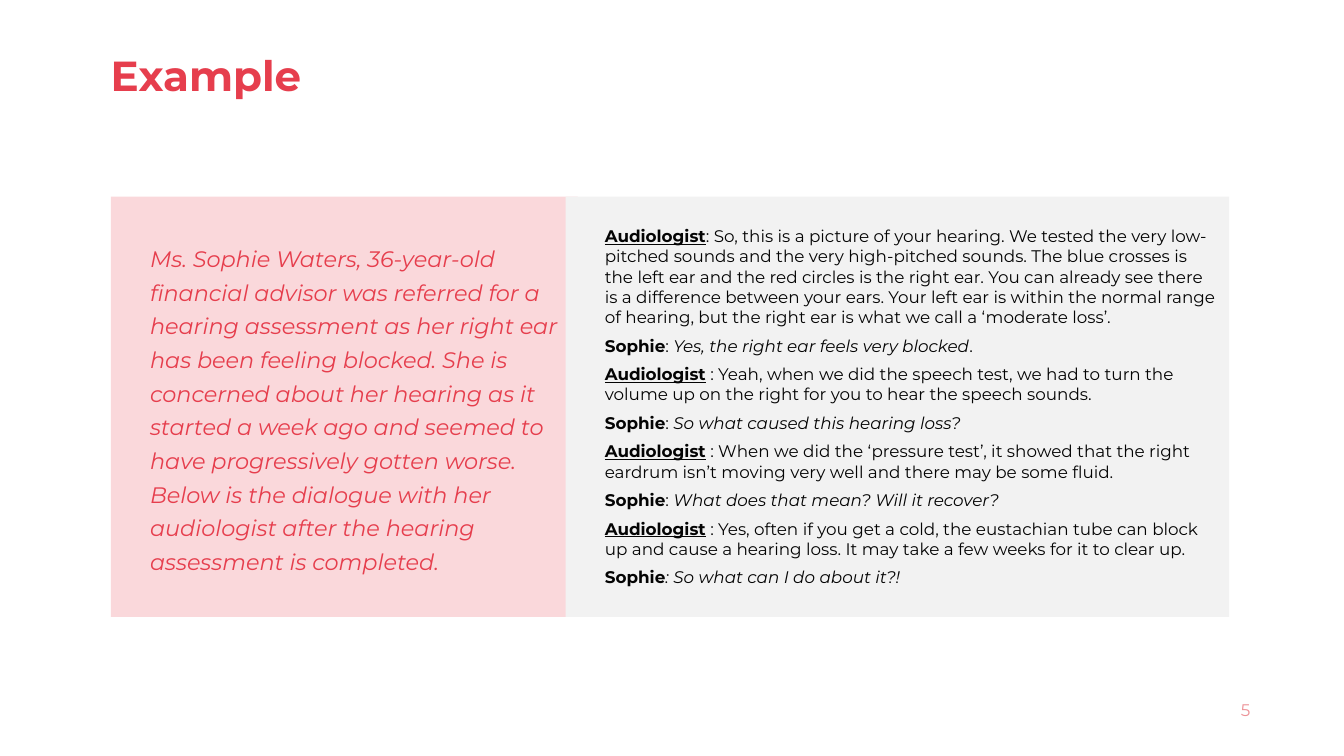
from dataclasses import dataclass

from pptx import Presentation
from pptx.dml.color import RGBColor
from pptx.enum.shapes import MSO_SHAPE
from pptx.enum.text import MSO_ANCHOR, PP_ALIGN
from pptx.util import Inches, Pt

SLIDE_WIDTH, SLIDE_HEIGHT = Inches(13.33), Inches(7.5)


@dataclass(frozen=True)
class Theme:
    font: str = "Montserrat"
    red: str = "E63E4D"
    pink: str = "FAD8DB"
    rose: str = "ED9297"
    grey: str = "F2F2F2"
    ink: str = "040404"
    title_size: int = 30
    case_size: int = 16
    small_size: int = 12
    indent: float = 0.29


THEME = Theme()

CASE = (
    "Ms. Sophie Waters, 36-year-old financial advisor was referred for a hearing "
    "assessment as her right ear has been feeling blocked. She is concerned about her "
    "hearing as it started a week ago and seemed to have progressively gotten worse. "
    "Below is the dialogue with her audiologist after the hearing assessment is completed."
)

# Each line: speaker, then (text, italic) pieces
DIALOGUE = [
    ("Audiologist", [(
        ": So, this is a picture of your hearing. We tested the very low-pitched sounds "
        "and the very high-pitched sounds. The blue crosses is the left ear and the red "
        "circles is the right ear. You can already see there is a difference between your "
        "ears. Your left ear is within the normal range of hearing, but the right ear is "
        "what we call a ‘moderate loss’.", False)]),
    ("Sophie", [(": ", False), ("Yes, the right ear feels very blocked", True), (".", False)]),
    ("Audiologist", [(
        " : Yeah, when we did the speech test, we had to turn the volume up on the right "
        "for you to hear the speech sounds.", False)]),
    ("Sophie", [(": ", False), ("So what caused this hearing loss?", True)]),
    ("Audiologist", [(
        " : When we did the ‘pressure test’, it showed that the right eardrum isn’t moving "
        "very well and there may be some fluid.", False)]),
    ("Sophie", [(": ", False), ("What does that mean? Will it recover?", True)]),
    ("Audiologist", [(
        " : Yes, often if you get a cold, the eustachian tube can block up and cause a "
        "hearing loss. It may take a few weeks for it to clear up.", False)]),
    ("Sophie", [(": So what can I do about it?!", True)]),
]


def place(left, top, width, height):
    """Turn percentages of the slide into lengths."""
    return (int(SLIDE_WIDTH * left / 100), int(SLIDE_HEIGHT * top / 100),
            int(SLIDE_WIDTH * width / 100), int(SLIDE_HEIGHT * height / 100))


def prepare_frame(shape):
    frame = shape.text_frame
    frame.word_wrap = True
    frame.vertical_anchor = MSO_ANCHOR.MIDDLE
    return frame


def add_label(slide, area):
    return prepare_frame(slide.shapes.add_textbox(*place(*area)))


def add_panel(slide, area, fill):
    panel = slide.shapes.add_shape(MSO_SHAPE.RECTANGLE, *place(*area))
    panel.shadow.inherit = False
    panel.fill.solid()
    panel.fill.fore_color.rgb = RGBColor.from_string(fill)
    panel.line.fill.background()
    return prepare_frame(panel)


def indent(paragraph):
    paragraph.alignment = PP_ALIGN.LEFT
    properties = paragraph._p.get_or_add_pPr()
    properties.set("marL", str(Inches(THEME.indent)))
    properties.set("indent", "0")


def add_run(paragraph, text, size, color, bold=False, italic=False, underline=False):
    run = paragraph.add_run()
    run.text = text
    font = run.font
    font.name, font.size = THEME.font, Pt(size)
    font.bold, font.italic, font.underline = bold, italic, underline
    font.color.rgb = RGBColor.from_string(color)


def add_dialogue(frame):
    for index, (speaker, pieces) in enumerate(DIALOGUE):
        paragraph = frame.add_paragraph() if index else frame.paragraphs[0]
        indent(paragraph)
        if index < len(DIALOGUE) - 1:
            paragraph.space_after = Pt(6)
        add_run(paragraph, speaker, THEME.small_size, THEME.ink, bold=True,
                underline=speaker == "Audiologist")
        for text, italic in pieces:
            add_run(paragraph, text, THEME.small_size, THEME.ink, italic=italic)


def main():
    presentation = Presentation()
    presentation.slide_width, presentation.slide_height = SLIDE_WIDTH, SLIDE_HEIGHT
    slide = presentation.slides.add_slide(presentation.slide_layouts[6])

    # Page number
    number = add_label(slide, (71.27, 91.2, 22.5, 5.33)).paragraphs[0]
    number.alignment = PP_ALIGN.RIGHT
    add_run(number, "5", THEME.small_size, THEME.rose)

    # Title
    title = add_label(slide, (7.5, 6.13, 86.27, 8.4)).paragraphs[0]
    title.line_spacing = 0.9
    add_run(title, "Example", THEME.title_size, THEME.red, bold=True)

    # Case description
    case = add_panel(slide, (8.25, 26, 34.73, 55.6), THEME.pink).paragraphs[0]
    indent(case)
    case.line_spacing = Pt(24)
    add_run(case, CASE, THEME.case_size, THEME.red, italic=True)

    # Dialogue
    add_dialogue(add_panel(slide, (42.09, 26, 49.36, 55.6), THEME.grey))

    presentation.save("out.pptx")


if __name__ == "__main__":
    main()
